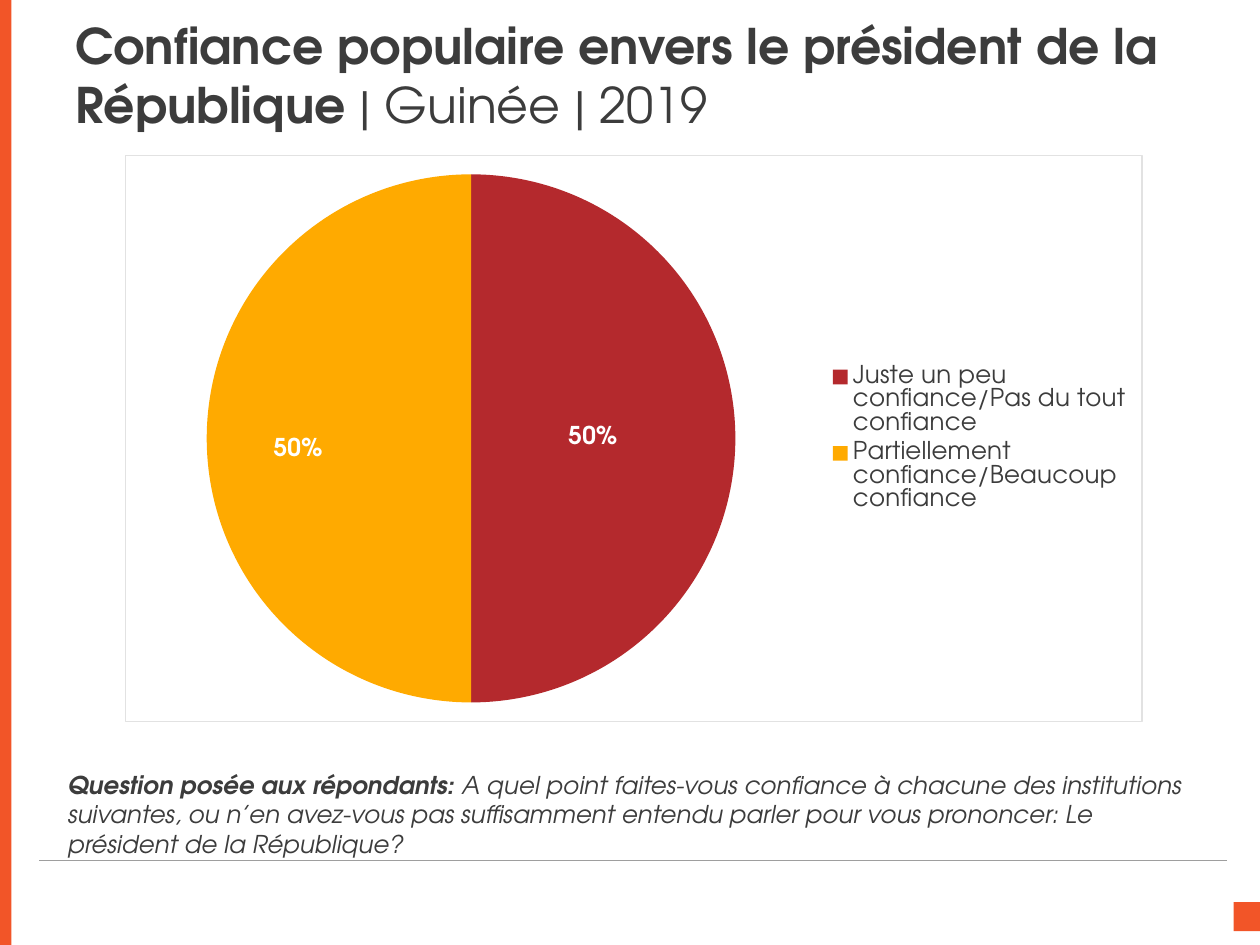
from dataclasses import dataclass

from lxml.etree import SubElement
from pptx import Presentation
from pptx.chart.data import CategoryChartData
from pptx.dml.color import RGBColor
from pptx.enum.chart import XL_CHART_TYPE, XL_LABEL_POSITION, XL_LEGEND_POSITION
from pptx.enum.shapes import MSO_CONNECTOR, MSO_SHAPE
from pptx.enum.text import MSO_ANCHOR
from pptx.oxml import parse_xml
from pptx.oxml.ns import nsdecls, qn
from pptx.util import Inches, Pt


@dataclass(frozen=True)
class Theme:
    font: str = "TeX Gyre Adventor"
    ink: str = "3C3C3C"
    accent: str = "F25528"
    rule: str = "9E9E9E"
    frame: str = "E2E2E2"
    paper: str = "FFFFFF"
    distrust: str = "B4292D"
    trust: str = "FFAA00"
    title_size: int = 28
    body_size: int = 14


class SlideBuilder:
    """Draws themed elements on the current page."""

    def __init__(self, page, theme):
        self.page = page
        self.theme = theme

    def style(self, font, size, color, bold=False, italic=False):
        font.name = self.theme.font
        font.size = Pt(size)
        font.color.rgb = RGBColor.from_string(color)
        font.bold = bold
        font.italic = italic

    def block(self, left, top, width, height):
        shape = self.page.shapes.add_shape(
            MSO_SHAPE.RECTANGLE, Inches(left), Inches(top), Inches(width), Inches(height))
        shape.shadow.inherit = False
        shape.fill.solid()
        shape.fill.fore_color.rgb = RGBColor.from_string(self.theme.accent)
        shape.line.fill.background()

    def rule(self, left, right, top):
        line = self.page.shapes.add_connector(
            MSO_CONNECTOR.STRAIGHT, Inches(left), Inches(top), Inches(right), Inches(top))
        line.line.color.rgb = RGBColor.from_string(self.theme.rule)
        line.line.width = Pt(0.25)
        SubElement(line._element.spPr, qn("a:effectLst"))

    def text(self, left, top, width, height, spans, size, italic=False, anchor=MSO_ANCHOR.TOP):
        box = self.page.shapes.add_textbox(
            Inches(left), Inches(top), Inches(width), Inches(height))
        frame = box.text_frame
        frame.word_wrap = True
        frame.vertical_anchor = anchor
        para = frame.paragraphs[0]
        for words, bold in spans:
            span = para.add_run()
            span.text = words
            self.style(span.font, size, self.theme.ink, bold, italic)

    def layout(self, x, y, width=None, height=None, inner=False):
        parts = ['<c:layoutTarget val="inner"/>'] if inner else []
        if width is not None:
            parts.append('<c:xMode val="edge"/><c:yMode val="edge"/>')
        sizes = {"x": x, "y": y, "w": width, "h": height}
        parts += [f'<c:{key} val="{value}"/>' for key, value in sizes.items() if value is not None]
        return parse_xml(f'<c:layout {nsdecls("c")}><c:manualLayout>{"".join(parts)}'
                         '</c:manualLayout></c:layout>')

    def pie(self, left, top, width, height, slices):
        data = CategoryChartData(number_format="0%")
        data.categories = [name for name, *_ in slices]
        data.add_series("Series 1", [value for _, value, *_ in slices])
        chart = self.page.shapes.add_chart(
            XL_CHART_TYPE.PIE, Inches(left), Inches(top), Inches(width), Inches(height), data).chart
        theme = self.theme
        self.style(chart.font, theme.body_size, theme.ink)
        chart.has_title = False
        chart.has_legend = True
        chart.legend.position = XL_LEGEND_POSITION.RIGHT
        chart.legend.include_in_layout = False
        position = chart.legend._element.find(qn("c:legendPos"))
        position.addnext(self.layout(0.69, 0.36, 0.3, 0.28))

        plot_area = chart._chartSpace.chart.plotArea
        for automatic in plot_area.findall(qn("c:layout")):
            plot_area.remove(automatic)
        plot_area.insert(0, self.layout(0.08, 0.03, 0.52, 0.94, inner=True))

        plot = chart.plots[0]
        plot.vary_by_categories = True
        series = plot.series[0]
        labels = series.data_labels
        labels.show_value = True
        labels.number_format = "0%"
        labels.number_format_is_linked = False
        self.style(labels.font, theme.body_size, theme.paper, bold=True)
        for index, (_, _, color, shift) in enumerate(slices):
            point = series.points[index]
            point.format.fill.solid()
            point.format.fill.fore_color.rgb = RGBColor.from_string(color)
            label = point.data_label
            self.style(label.font, theme.body_size, theme.paper, bold=True)
            label.position = XL_LABEL_POSITION.CENTER
            labels._element.findall(qn("c:dLbl"))[index][0].addnext(self.layout(*shift))

        chart._chartSpace.chart.addnext(parse_xml(
            f'<c:spPr {nsdecls("c", "a")}>'
            f'<a:solidFill><a:srgbClr val="{theme.paper}"/></a:solidFill>'
            f'<a:ln w="{Pt(0.75)}"><a:solidFill><a:srgbClr val="{theme.frame}"/></a:solidFill></a:ln>'
            '</c:spPr>'))


def main():
    deck = Presentation()
    deck.slide_width, deck.slide_height = Inches(10), Inches(7.5)
    theme = Theme()
    slide = SlideBuilder(deck.slides.add_slide(deck.slide_layouts[6]), theme)
    slide.block(9.79, 7.16, 0.22, 0.23)
    slide.rule(0.31, 9.74, 6.83)
    slide.block(0, 0, 0.09, 7.5)
    slide.text(0.5, 0.45, 9.22, 0.28, [
        ("Confiance populaire envers le président de la République ", True),
        ("| Guinée | 2019", False),
    ], theme.title_size, anchor=MSO_ANCHOR.MIDDLE)
    slide.text(0.44, 6.06, 9.06, 0.69, [
        ("Question posée aux répondants: ", True),
        ("A quel point faites-vous confiance à chacune des institutions suivantes, "
         "ou n’en avez-vous pas suffisamment entendu parler pour vous prononcer: "
         "Le président de la République?", False),
    ], theme.body_size, italic=True)
    slide.pie(0.99, 1.23, 8.08, 4.5, [
        ("Juste un peu confiance/Pas du tout confiance", 0.5, theme.distrust, (-0.01, 0)),
        ("Partiellement confiance/Beaucoup confiance", 0.5, theme.trust, (-0.04, 0.02)),
    ])
    deck.save("out.pptx")


if __name__ == "__main__":
    main()
